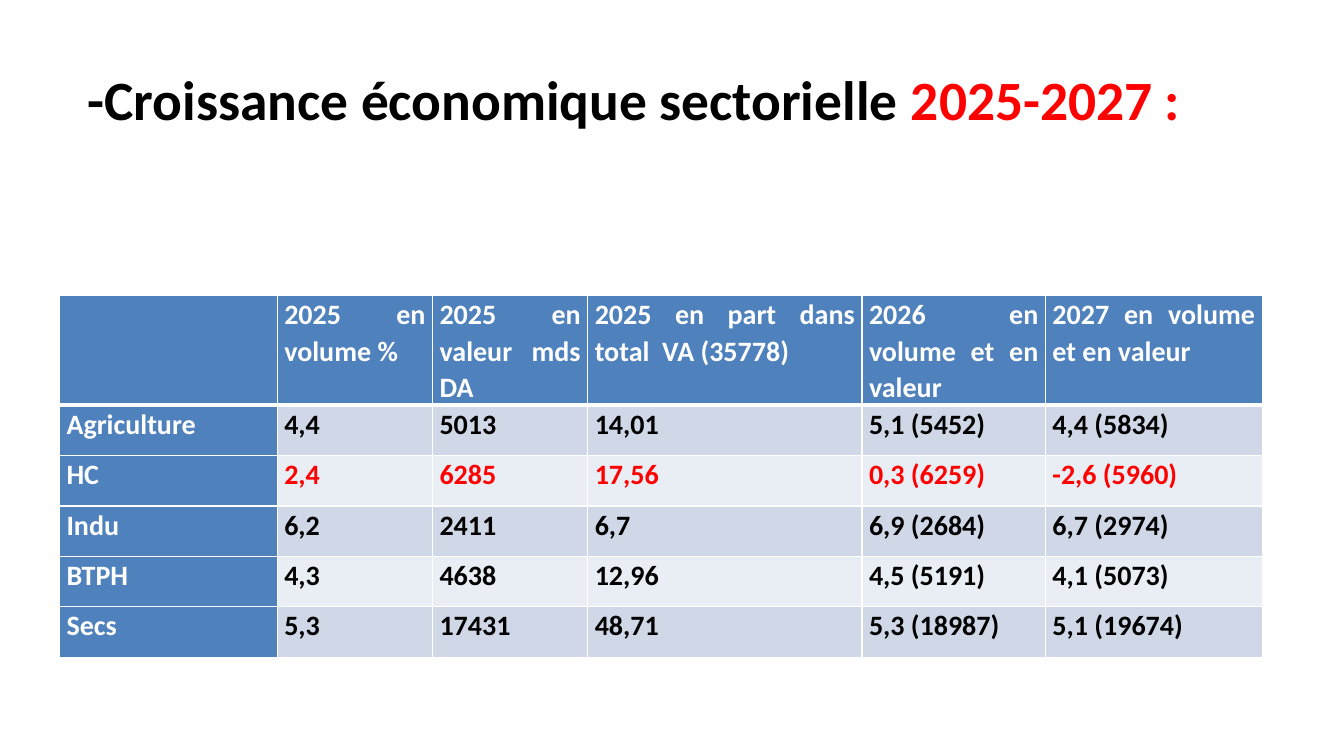
from lxml import etree
from pptx import Presentation
from pptx.dml.color import RGBColor
from pptx.enum.text import MSO_ANCHOR, PP_ALIGN
from pptx.oxml.ns import qn
from pptx.util import Inches, Pt

COLORS = {"black": "000000", "white": "FFFFFF", "red": "FF0000",
          "blue": "4F81BD", "band_dark": "D0D8E8", "band_light": "E9EDF4"}


def add_run(p, text, size, color):
    r = p.add_run()
    r.text = text
    r.font.name = "Calibri"
    r.font.size = Pt(size)
    r.font.bold = True
    r.font.color.rgb = RGBColor.from_string(COLORS[color])


def add_border(cell, side, width):
    ln = etree.SubElement(cell._tc.get_or_add_tcPr(), qn("a:ln" + side), w=str(Pt(width)))
    fill = etree.SubElement(ln, qn("a:solidFill"))
    etree.SubElement(fill, qn("a:srgbClr"), val=COLORS["white"])


prs = Presentation()
prs.slide_width, prs.slide_height = Inches(13.33), Inches(7.5)
s = prs.slides.add_slide(prs.slide_layouts[6])

# Title
title = s.shapes.add_textbox(Inches(0.77), Inches(0.35), Inches(12), Inches(1.25))
tf = title.text_frame
tf.word_wrap = True
tf.vertical_anchor = MSO_ANCHOR.MIDDLE
p = tf.paragraphs[0]
add_run(p, "-Croissance économique sectorielle ", 39.6, "black")
add_run(p, "2025-2027 :", 39.6, "red")

# Growth by sector
rows = [
    ["", "2025 en volume %", "2025 en valeur mds DA", "2025 en part dans total  VA (35778)",
     "2026 en volume et en valeur", "2027 en volume et en valeur"],
    ["Agriculture", "4,4", "5013", "14,01", "5,1 (5452)", "4,4 (5834)"],
    ["HC", "2,4", "6285", "17,56", "0,3 (6259)", "-2,6 (5960)"],
    ["Indu", "6,2", "2411", "6,7", "6,9 (2684)", "6,7 (2974)"],
    ["BTPH", "4,3", "4638", "12,96", "4,5 (5191)", "4,1 (5073)"],
    ["Secs", "5,3", "17431", "48,71", "5,3 (18987)", "5,1 (19674)"],
]
col_widths = [2.16, 1.54, 1.54, 2.72, 1.82, 2.15]
row_heights = [1.09] + [0.5] * 5

table = s.shapes.add_table(len(rows), len(col_widths), Inches(0.59), Inches(2.93),
                           Inches(sum(col_widths)), Inches(sum(row_heights))).table
for column, width in zip(table.columns, col_widths):
    column.width = Inches(width)

for i, values in enumerate(rows):
    table.rows[i].height = Inches(row_heights[i])
    for j, value in enumerate(values):
        cell = table.cell(i, j)
        cell.margin_left = cell.margin_right = Inches(0.07)
        cell.margin_top = cell.margin_bottom = 0

        # White grid, thicker under the header
        for side in "LRTB":
            thick = (i == 0 and side == "B") or (i == 1 and side == "T")
            add_border(cell, side, 3 if thick else 1)

        # Blue header row and first column, banded body
        is_head = i == 0 or j == 0
        band = "band_dark" if i % 2 else "band_light"
        cell.fill.solid()
        cell.fill.fore_color.rgb = RGBColor.from_string(COLORS["blue" if is_head else band])

        p = cell.text_frame.paragraphs[0]
        p.alignment = PP_ALIGN.JUSTIFY
        p.line_spacing = 1.07
        if value:
            body_color = "red" if values[0] == "HC" else "black"
            add_run(p, value, 20, "white" if is_head else body_color)

prs.save("out.pptx")
